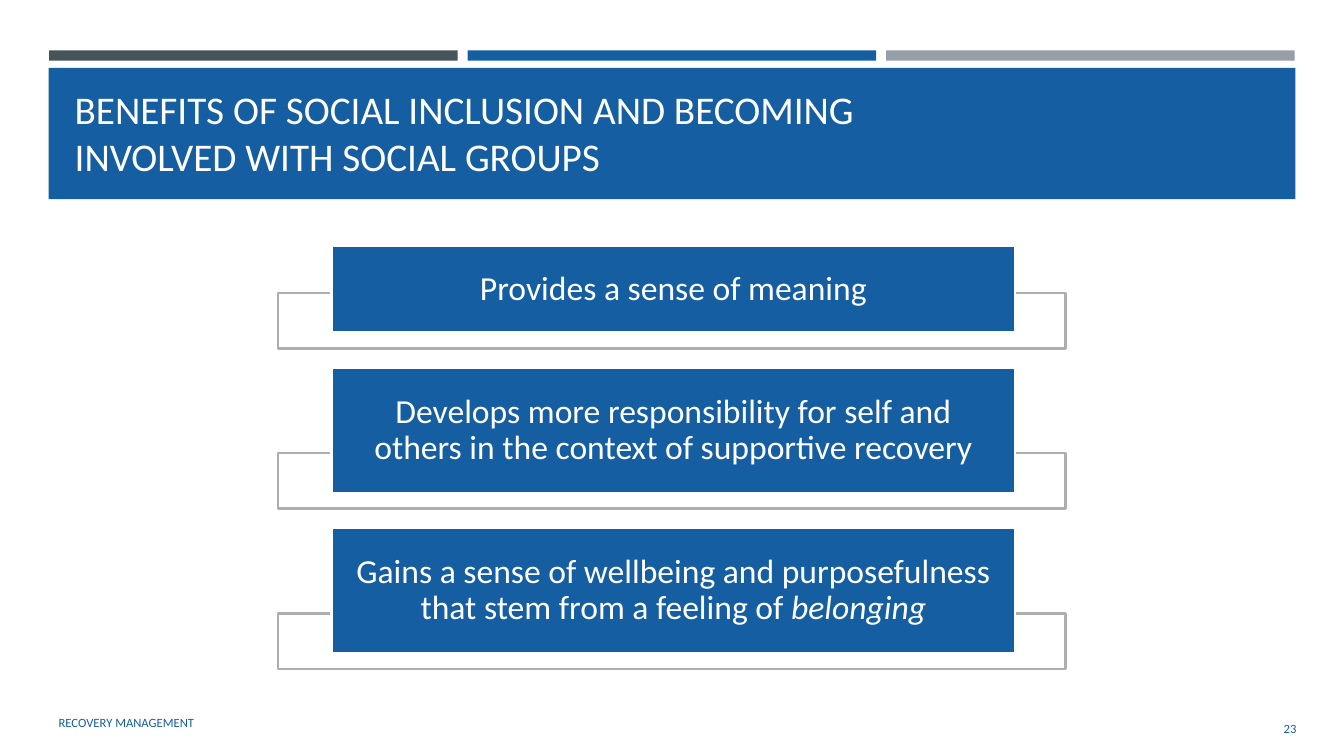
import pptx
import pptx.util
import pptx.dml.color
import pptx.enum.shapes
import pptx.enum.text
import pptx.oxml.ns
import lxml.etree

Pt = pptx.util.Pt
RGB = pptx.dml.color.RGBColor.from_string
ALIGN = pptx.enum.text.PP_ALIGN
COLORS = {"blue": "155EA1", "slate": "465359", "gray": "969FA7",
          "outline": "AEAEAE", "white": "FFFFFF"}

deck = pptx.Presentation()
deck.slide_width, deck.slide_height = Pt(960), Pt(540)
slide = deck.slides.add_slide(deck.slide_layouts[6])


def add_box(left, top, width, height, fill, line=None):
    box = slide.shapes.add_shape(pptx.enum.shapes.MSO_SHAPE.RECTANGLE,
                                 Pt(left), Pt(top), Pt(width), Pt(height))
    box.shadow.inherit = False
    box.fill.solid()
    box.fill.fore_color.rgb = RGB(COLORS[fill])
    if line:
        box.line.color.rgb = RGB(COLORS[line])
        box.line.width = Pt(1.75)
    else:
        box.line.fill.background()
    return box


def write(shape, texts, size, color, align):
    frame = shape.text_frame
    frame.word_wrap = True
    frame.vertical_anchor = pptx.enum.text.MSO_ANCHOR.MIDDLE
    paragraph = frame.paragraphs[0]
    paragraph.alignment = align
    for text in texts:
        run = paragraph.add_run()
        run.text = text
        run.font.name = "Calibri"
        run.font.size = Pt(size)
        run.font.color.rgb = RGB(COLORS[color])
    return paragraph


for column, color in enumerate(["slate", "blue", "gray"]):
    add_box(35.2 + column * 298.9, 36, 291.8, 7.4, color)
add_box(34.8, 48.5, 890.5, 93.7, "blue")

captions = [
    ("BENEFITS OF SOCIAL INCLUSION AND BECOMING INVOLVED WITH SOCIAL GROUPS",
     (46.3, 62.6, 621.4, 64), 28, "white", ALIGN.LEFT),
    ("RECOVERY MANAGEMENT", (34.8, 502, 537, 28.8), 9, "blue", ALIGN.LEFT),
    ("23", (850.3, 506.2, 82.8, 28.8), 9, "blue", ALIGN.RIGHT),
]
for text, place, size, color, align in captions:
    caption = slide.shapes.add_textbox(*map(Pt, place))
    write(caption, [text], size, color, align)

benefits = [
    (["Provides a sense of meaning"], 61.9),
    (["Develops more responsibility for self and others in the context "
      "of supportive recovery"], 89.3),
    (["Gains a sense of wellbeing and purposefulness that stem from a "
      "feeling of ", "belonging"], 89.3),
]
overlap, bracket_height, gap = 28.4, 39.6, 14
card_top = 175.7
for texts, card_height in benefits:
    bracket_top = card_top + card_height - overlap
    bracket = add_box(198.7, bracket_top, 562.3, bracket_height, "white", "outline")
    bracket_color = bracket.fill._xPr.find(".//" + pptx.oxml.ns.qn("a:srgbClr"))
    lxml.etree.SubElement(bracket_color, pptx.oxml.ns.qn("a:alpha"), val="90000")
    card = add_box(236.9, card_top, 488.2, card_height, "blue", "white")
    card.text_frame.margin_left = card.text_frame.margin_right = Pt(15)
    card.text_frame.margin_top = card.text_frame.margin_bottom = 0
    statement = write(card, texts, 24, "white", ALIGN.CENTER)
    statement.line_spacing = 0.9
    for emphasis in statement.runs[1:]:
        emphasis.font.italic = True
    card_top = bracket_top + bracket_height + gap

deck.save("out.pptx")
